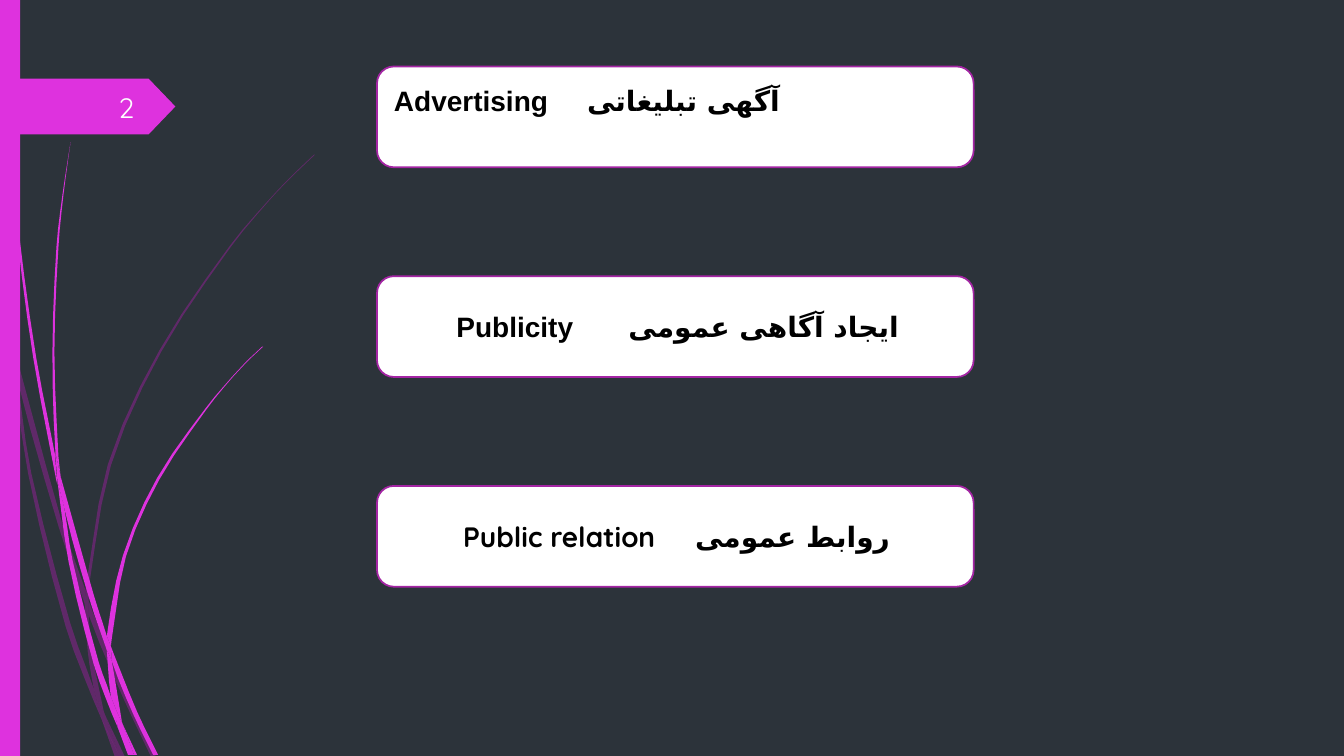
from lxml.etree import SubElement
from pptx import Presentation
from pptx.dml.color import RGBColor
from pptx.enum.shapes import MSO_SHAPE as SHAPE
from pptx.enum.text import MSO_ANCHOR as ANCHOR, PP_ALIGN as ALIGN
from pptx.oxml.ns import qn
from pptx.util import Pt

COLORS = {"bg": "2C333A", "pink": "DE32DE", "purple": "B01CB0", "outline": "A425A4",
          "white": "FFFFFF", "number": "FEFFFF", "black": "000000"}
PERSIAN_FONT = "DejaVu Sans"
GRID = 0.72

BACK_WISPS = [
    ([(11, 350), (9, 322), (0, 282)], [(0, 299), (10, 344), (11, 350)]),
    ([(14, 345), (17, 376), (58, 522), (84, 599)], [(85, 586), (62, 520), (14, 345)]),
    ([(88, 596), (88, 610), (123, 694), (150, 751)], [(155, 751), (127, 692), (92, 607)]),
    ([(119, 751), (124, 751)], [(105, 711)]),
    ([(101, 714), (99, 707), (93, 683), (70, 619), (31, 469), (17, 376), (11, 350)],
     [(11, 350), (28, 470), (65, 621), (92, 693), (101, 714)]),
    ([(84, 599), (87, 646), (93, 683), (96, 692), (105, 711)],
     [(103, 706), (91, 646), (88, 610), (88, 608), (84, 599)]),
    ([(88, 596), (88, 584), (110, 462), (160, 349), (229, 245), (268, 198), (290, 175),
      (312, 154)],
     [(312, 153), (289, 175), (268, 197), (228, 244), (158, 348), (107, 461), (85, 584),
      (85, 586)]),
    ([(101, 714), (114, 751)], [(119, 751)]),
    ([(88, 608), (88, 610), (88, 596)], [(85, 586), (84, 599)]),
    ([(96, 692), (93, 683), (99, 707), (101, 714), (119, 751)], [(105, 711), (96, 692)]),
]
FRONT_WISPS = [
    ([(3, 0), (4, 48), (7, 110), (17, 233), (33, 355), (56, 477), (57, 481)],
     [(55, 457), (55, 453), (36, 355), (19, 232), (8, 109), (5, 48), (4, 0)]),
    ([(60, 472), (64, 505), (88, 592), (106, 645)],
     [(106, 633), (106, 631), (93, 590), (60, 472)]),
    ([(110, 641), (111, 656), (132, 708), (152, 749)], [(157, 749), (136, 706), (113, 649)]),
    ([(57, 477), (68, 557), (93, 659), (111, 708), (117, 722)],
     [(116, 717), (110, 691), (98, 657), (72, 556), (64, 505), (57, 477)]),
    ([(60, 472), (58, 453), (54, 349), (58, 245), (63, 193), (70, 141)],
     [(70, 141), (62, 193), (56, 245), (52, 349), (55, 449), (60, 472)]),
    ([(133, 749), (136, 749)], [(122, 719)]),
    ([(57, 477), (64, 505)], [(60, 472), (55, 449), (55, 453)]),
    ([(111, 633), (125, 552), (158, 476), (205, 406), (231, 374), (245, 359), (261, 344)],
     [(260, 344), (245, 358), (231, 373), (204, 405), (156, 474), (122, 551), (106, 631),
      (110, 641)]),
    ([(117, 722), (127, 749)], [(131, 749)]),
    ([(106, 645), (110, 691), (116, 706), (122, 719)],
     [(121, 716), (111, 656), (109, 651), (106, 645)]),
    ([(106, 645), (109, 651), (111, 656)], [(110, 641), (106, 631), (106, 633)]),
    ([(116, 706), (110, 691), (116, 717), (117, 722), (130, 749)],
     [(133, 749), (122, 719), (116, 706)]),
]
TERMS = [
    {"runs": [("Advertising\t", "Arial"), ("آگهی تبلیغاتی", "Arial")],
     "left": 8.6, "tab": 138, "bottom": 27},
    {"runs": [("Publicity\t", "Arial"), ("ایجاد آگاهی عمومی", "Arial")],
     "left": 53.2, "tab": 122.9, "bottom": 3.6},
    {"runs": [("Public relation\t", "Quicksand"), ("روابط", "Arial"),
              (" عمومی", "Quicksand")],
     "left": 58.1, "tab": 165.6, "bottom": 3.6},
]


def rgb(name):
    """Return the named colour."""
    return RGBColor.from_string(COLORS[name])


def paint(sp, color):
    """Give a shape a flat fill without line or shadow."""
    sp.shadow.inherit = False
    sp.fill.solid()
    sp.fill.fore_color.rgb = rgb(color)
    sp.line.fill.background()
    return sp


def add_run(p, text, font, color, bold=False):
    """Append a 20 pt run to a paragraph."""
    r = p.add_run()
    r.text = text
    r.font.name, r.font.size, r.font.bold = font, Pt(20), bold
    r.font.color.rgb = rgb(color)
    SubElement(r.font._element, qn("a:cs"), typeface=PERSIAN_FONT)


def smooth(knots, steps=3):
    """Interpolate the knots with a spline whose tangents fit uneven spacing."""
    def slope(i):
        """Return the direction of the curve at a knot."""
        (ax, ay), (bx, by) = knots[max(i - 1, 0)], knots[min(i + 1, len(knots) - 1)]
        length = max(abs(bx - ax) + abs(by - ay), 1)
        return (bx - ax) / length, (by - ay) / length

    points = []
    for i, (a, b) in enumerate(zip(knots, knots[1:])):
        span = abs(b[0] - a[0]) + abs(b[1] - a[1])
        parts = steps if span > 30 else 1
        for t in (k / parts for k in range(parts)):
            points.append(tuple(
                p * (1 - t) ** 2 * (1 + 2 * t) + q * t * t * (3 - 2 * t)
                + span * (m * t * (1 - t) ** 2 - n * t * t * (1 - t))
                for p, q, m, n in zip(a, b, slope(i), slope(i + 1))))
    return points + [knots[-1]]


def add_wisp(slide, x, y, sides, color, alpha=None):
    """Draw one blade of grass bounded by two smooth sides."""
    outline = [(Pt(x + px * GRID), Pt(y + py * GRID))
               for side in sides for px, py in smooth(side)]
    builder = slide.shapes.build_freeform(*outline[0], scale=1.0)
    builder.add_line_segments(outline[1:], close=True)
    sp = paint(builder.convert_to_shape(), color)
    if alpha:
        clr = sp._element.spPr.find(qn("a:solidFill"))[0]
        SubElement(clr, qn("a:alpha"), val=str(alpha * 1000))


def add_side(slide, x, y, h):
    """Draw the wisps, the side bar and the page number tag."""
    for sides in BACK_WISPS:
        add_wisp(slide, x, y, sides, "purple", 40)
    for sides in FRONT_WISPS:
        add_wisp(slide, x, y, sides, "pink")
    paint(slide.shapes.add_shape(SHAPE.RECTANGLE, Pt(x), Pt(y), Pt(14.4), Pt(h)), "pink")
    tag = slide.shapes.add_shape(SHAPE.PENTAGON, Pt(x), Pt(y + 56.2), Pt(125.3), Pt(39.8))
    tag.adjustments[0] = 0.48
    paint(tag, "pink")
    tf = slide.shapes.add_textbox(Pt(x + 41.8), Pt(y + 61.9), Pt(61.2), Pt(28.8)).text_frame
    tf.word_wrap = True
    tf.vertical_anchor = ANCHOR.MIDDLE
    p = tf.paragraphs[0]
    p.alignment = ALIGN.RIGHT
    add_run(p, "2", "Quicksand", "number")


def add_term(slide, x, y, w, h, term):
    """Draw a rounded box with an English term and its Persian equivalent."""
    sp = slide.shapes.add_shape(SHAPE.ROUNDED_RECTANGLE, Pt(x), Pt(y), Pt(w), Pt(h))
    paint(sp, "white")
    sp.line.color.rgb = rgb("outline")
    sp.line.width = Pt(1.25)
    tf = sp.text_frame
    tf.word_wrap = True
    tf.vertical_anchor = ANCHOR.MIDDLE
    tf.margin_left, tf.margin_bottom = Pt(term["left"]), Pt(term["bottom"])
    p = tf.paragraphs[0]
    p.alignment = ALIGN.LEFT
    tabs = SubElement(p._p.get_or_add_pPr(), qn("a:tabLst"))
    SubElement(tabs, qn("a:tab"), pos=str(Pt(term["tab"])), algn="l")
    for text, font in term["runs"]:
        add_run(p, text, font, "black", True)


def add_terms(slide, x, y, w, h, pitch):
    """Stack the term boxes at an equal pitch."""
    for i, term in enumerate(TERMS):
        add_term(slide, x, y + i * pitch, w, h, term)


def main():
    """Build and save the slide."""
    prs = Presentation()
    prs.slide_width, prs.slide_height = Pt(960), Pt(540)
    slide = prs.slides.add_slide(prs.slide_layouts[6])
    slide.background.fill.solid()
    slide.background.fill.fore_color.rgb = rgb("bg")
    add_side(slide, 0, 0, 540)
    add_terms(slide, 269.3, 47.5, 426.2, 72, 149.8)
    prs.save("out.pptx")


if __name__ == "__main__":
    main()
